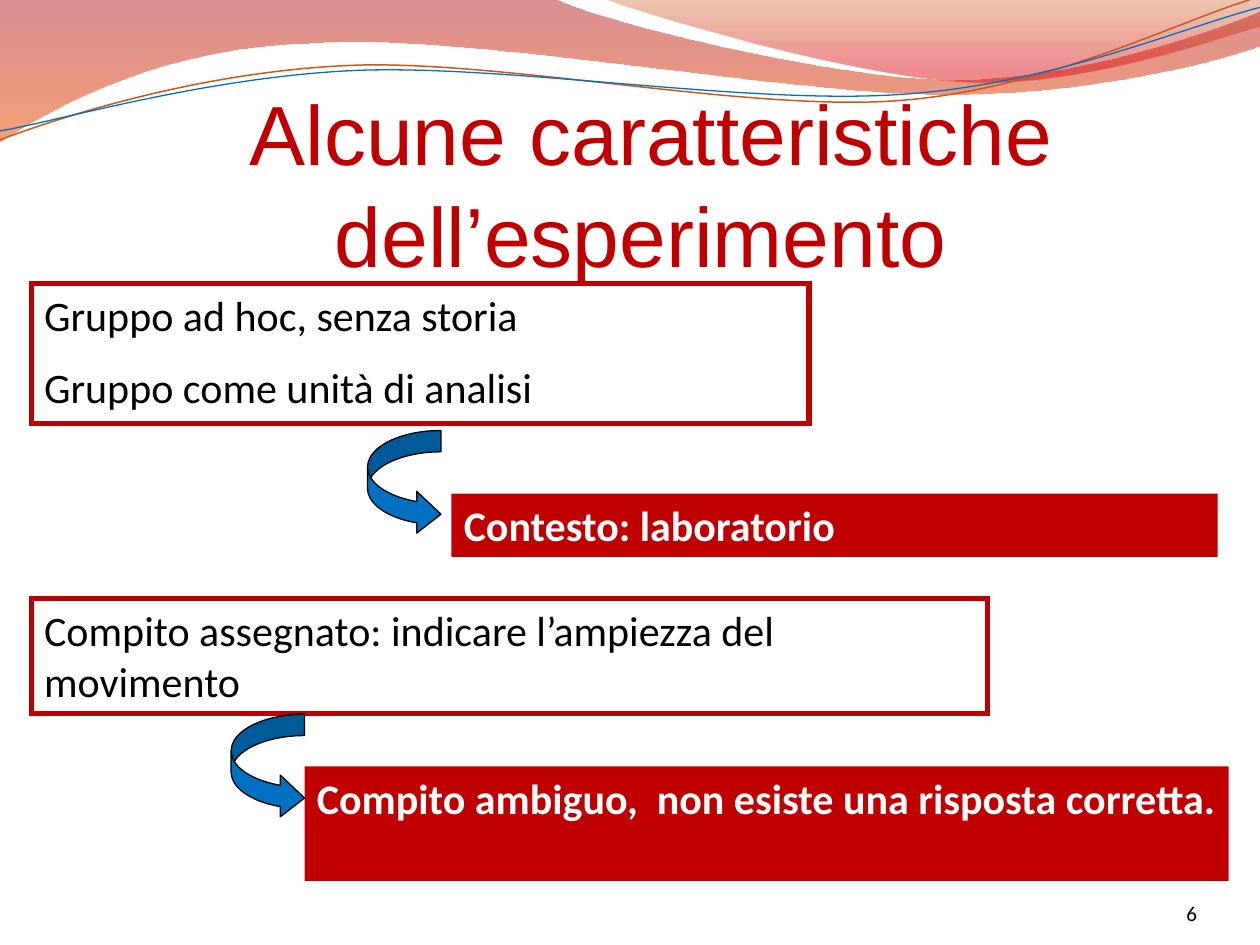
from lxml import etree
from pptx import Presentation
from pptx.dml.color import RGBColor
from pptx.enum.shapes import MSO_SHAPE
from pptx.enum.text import MSO_ANCHOR, PP_ALIGN
from pptx.oxml.ns import qn
from pptx.util import Cm, Pt

RECTANGLE, CURVED_ARROW = MSO_SHAPE.RECTANGLE, MSO_SHAPE.CURVED_RIGHT_ARROW
LEFT, CENTER, RIGHT = PP_ALIGN.LEFT, PP_ALIGN.CENTER, PP_ALIGN.RIGHT
TOP, MIDDLE, BOTTOM = MSO_ANCHOR.TOP, MSO_ANCHOR.MIDDLE, MSO_ANCHOR.BOTTOM

BLACK = RGBColor(0x00, 0x00, 0x00)
WHITE = RGBColor(0xFF, 0xFF, 0xFF)
RED = RGBColor(0xC0, 0x00, 0x00)
BLUE = RGBColor(0x00, 0x70, 0xC0)
ORANGE = RGBColor(0xCF, 0x58, 0x18)
WINE = RGBColor(0xAF, 0x09, 0x11)
BRIGHT_ORANGE = RGBColor(0xEE, 0x53, 0x00)
BROWN = RGBColor(0xC2, 0x44, 0x00)
SCARLET = RGBColor(0xDC, 0x00, 0x0B)


def write(shape, text, size=24, font="Calibri", color=BLACK, bold=False,
          align=LEFT, anchor=TOP, gap=12):
    """Fill a shape with one paragraph per line of text."""
    frame = shape.text_frame
    frame.text = text
    frame.word_wrap = True
    frame.vertical_anchor = anchor
    for number, paragraph in enumerate(frame.paragraphs):
        paragraph.alignment = align
        paragraph.space_before = Pt(gap if number else 0)
        letters = paragraph.runs[0].font
        letters.size, letters.name, letters.bold = Pt(size), font, bold
        letters.color.rgb = color


def draw_wave(start, segments, close):
    """Draw an outline in cm: pairs are straight lines, sextuples Bézier curves."""
    points = [(Cm(segment[i]), Cm(segment[i + 1]))
              for segment in segments for i in range(0, len(segment), 2)]
    builder = slide.shapes.build_freeform(Cm(start[0]), Cm(start[1]))
    builder.add_line_segments(points, close=close)
    wave = builder.convert_to_shape()
    wave.shadow.inherit = False
    # Join the three points of each curve into one cubic segment
    steps = iter(list(wave._element.spPr.iter(qn("a:lnTo"))))
    for segment in segments:
        step = next(steps)
        if len(segment) == 6:
            curve = etree.Element(qn("a:cubicBezTo"))
            step.addprevious(curve)
            for corner in (step, next(steps), next(steps)):
                curve.append(corner[0])
                corner.getparent().remove(corner)
    return wave


prs = Presentation()
prs.slide_width, prs.slide_height = Cm(25.4), Cm(19.05)
slide = prs.slides.add_slide(prs.slide_layouts[5])

# Translucent waves along the top
bands = [
    ((0, 0),
     [(11.18, -0.03), (12.09, 0.43, 16.87, 1.6, 19.25, 1.6),
      (21.67, 1.6, 24.33, 0.66, 25.4, 0.23), (25.43, 0.91),
      (24.97, 1.12, 22.1, 1.93, 18.95, 1.9), (15.8, 1.9, 9.7, 0.71, 6.53, 0.86),
      (3.28, 0.91, 1.17, 2.11, -0.03, 2.87)],
     [(0, WINE, 45), (1, BRIGHT_ORANGE, 55)]),
    ((12.17, -0.03),
     [(12.93, 0.28, 17.32, 1.57, 19.53, 1.65),
      (21.74, 1.75, 24.41, 0.81, 25.4, 0.53), (25.4, 0)],
     [(0, BROWN, 30), (0.8, SCARLET, 45)]),
]
for start, segments, stops in bands:
    band = draw_wave(start, segments, close=True)
    band.line.fill.background()
    band.fill.gradient()
    band.fill.gradient_angle = 270
    for stop, (position, color, _) in zip(band.fill.gradient_stops, stops):
        stop.position = position
        stop.color.rgb = color
    tints = band._element.spPr.iter(qn("a:srgbClr"))
    for tint, (_, _, opacity) in zip(tints, stops):
        etree.SubElement(tint, qn("a:alpha")).set("val", str(opacity * 1000))

# Thin lines following the waves
threads = [
    ((0, 2.82),
     [(1.22, 2.36, 4.01, 1.45, 7.04, 1.32), (10.03, 1.19, 15.06, 2.26, 18.11, 2.03),
      (21.16, 1.8, 23.83, 0.38, 25.35, -0.05)], ORANGE, 0.85),
    ((0, 2.64),
     [(1.19, 2.44, 4.17, 1.55, 7.19, 1.42), (10.24, 1.3, 15.16, 2.13, 18.21, 1.9),
      (21.23, 1.7, 23.9, 0.53, 25.4, 0.15)], BLUE, 0.75),
]
for start, segments, color, weight in threads:
    thread = draw_wave(start, segments, close=False)
    thread.fill.background()
    thread.line.color.rgb = color
    thread.line.width = Pt(weight)

# Slide number
page_number = slide.shapes.add_textbox(Cm(22.02), Cm(17.65), Cm(2.11), Cm(1.02))
write(page_number, "6", size=12, align=RIGHT, anchor=BOTTOM)
frame = page_number.text_frame
frame.margin_left = frame.margin_right = frame.margin_top = frame.margin_bottom = 0

# Features (outlined) and what follows from them (filled)
statements = [
    ("Gruppo ad hoc, senza storia\nGruppo come unità di analisi",
     0.64, 5.72, 15.67, 2.82, False),
    ("Contesto: laboratorio", 9.1, 9.95, 15.45, 1.28, True),
    ("Compito assegnato: indicare l’ampiezza del movimento",
     0.64, 12.07, 19.27, 2.31, False),
    ("Compito ambiguo,  non esiste una risposta corretta.",
     6.14, 15.45, 18.63, 2.31, True),
]
for text, left, top, width, height, filled in statements:
    statement = slide.shapes.add_shape(RECTANGLE, Cm(left), Cm(top), Cm(width), Cm(height))
    statement.shadow.inherit = False
    if filled:
        statement.fill.solid()
        statement.fill.fore_color.rgb = RED
        statement.line.fill.background()
    else:
        statement.fill.background()
        statement.line.color.rgb = RED
        statement.line.width = Pt(3)
        outline = statement._element.spPr.find(qn("a:ln"))
        etree.SubElement(outline, qn("a:miter")).set("lim", "800000")
    write(statement, text, color=WHITE if filled else BLACK, bold=filled)

# Title, above the boxes
title = slide.shapes.title
title.left, title.top, title.width, title.height = Cm(0), Cm(2.2), Cm(25.83), Cm(2.97)
write(title, "Alcune caratteristiche dell’esperimento", size=48, font="Arial",
      color=RED, align=CENTER, anchor=MIDDLE)
heading = title.text_frame.paragraphs[0]
heading.line_spacing = Pt(58)
heading._p.get_or_add_pPr().set("indent", str(Cm(0.42)))
slide.shapes._spTree.append(title._element)

# Curved arrows from feature to consequence
for left, top in [(7.41, 8.68), (4.66, 14.4)]:
    arrow = slide.shapes.add_shape(CURVED_ARROW, Cm(left), Cm(top), Cm(1.48), Cm(2.11))
    arrow.shadow.inherit = False
    for index, ratio in enumerate((0.29, 0.57, 0.33)):
        arrow.adjustments[index] = ratio
    arrow.fill.solid()
    arrow.fill.fore_color.rgb = BLUE
    arrow.line.color.rgb = BLACK
    arrow.line.width = Pt(0.75)

prs.save("out.pptx")
